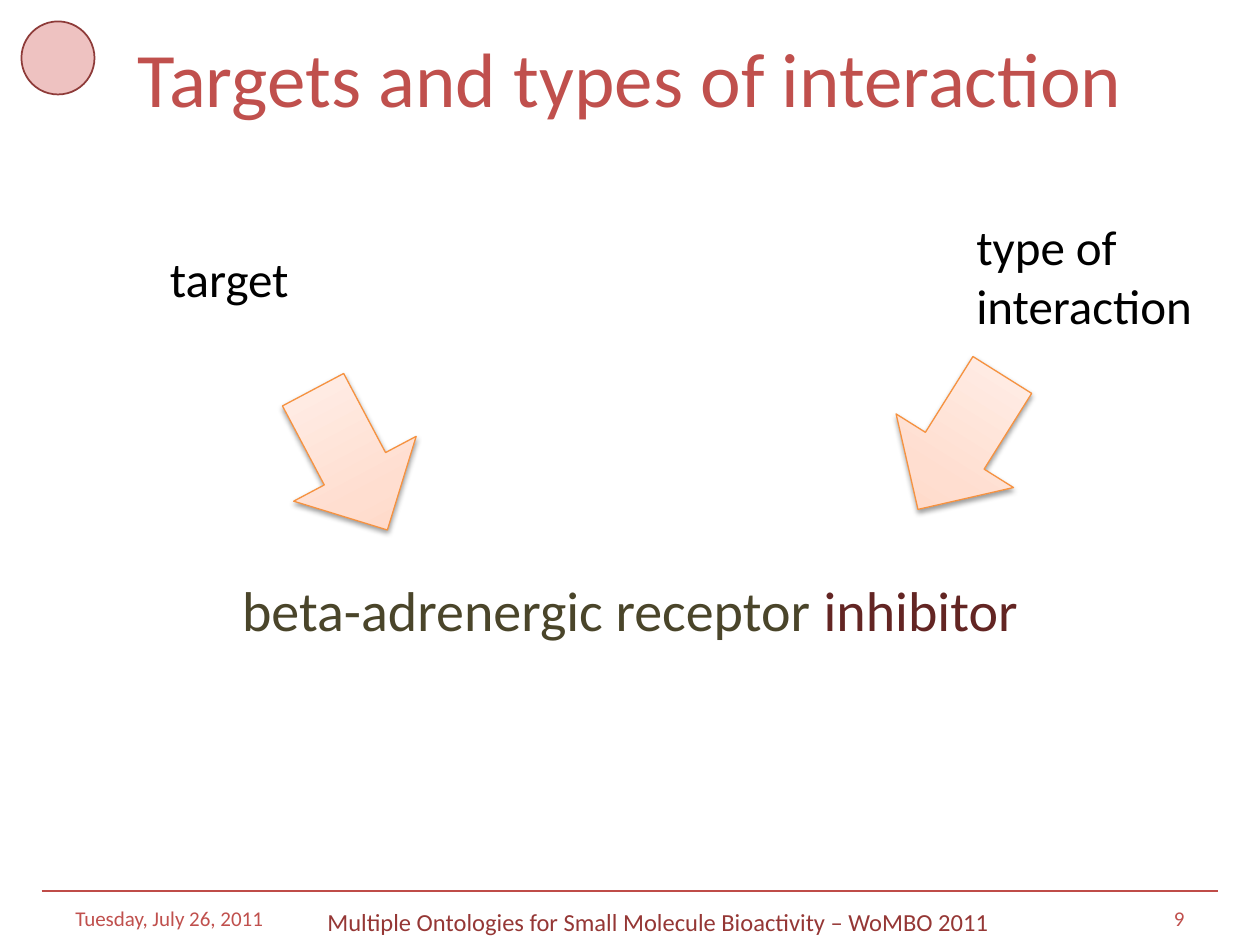
from copy import deepcopy

from lxml import etree
from pptx import Presentation
from pptx.dml.color import RGBColor
from pptx.enum.shapes import MSO_CONNECTOR, MSO_SHAPE
from pptx.enum.text import MSO_ANCHOR, MSO_AUTO_SIZE, PP_ALIGN
from pptx.oxml import parse_xml
from pptx.oxml.ns import nsdecls, qn
from pptx.util import Inches, Pt

FONT = "Calibri"
BLACK = RGBColor(0x00, 0x00, 0x00)
RED = RGBColor(0xC0, 0x50, 0x4D)
RULE_RED = RGBColor(0xBF, 0x4C, 0x48)
FOOTER_RED = RGBColor(0x95, 0x37, 0x35)
DARK_RED = RGBColor(0x63, 0x25, 0x23)
OLIVE = RGBColor(0x4A, 0x45, 0x2A)
EMBLEM_LINE = RGBColor(0x8E, 0x3B, 0x39)
EMBLEM_FILL = RGBColor(0xEE, 0xC2, 0xC1)
ORANGE = RGBColor(0xF6, 0x92, 0x40)
PEACH_STOPS = (
    (0, RGBColor(0xFF, 0xD2, 0xBD)),
    (0.35, RGBColor(0xFF, 0xDE, 0xD0)),
    (1, RGBColor(0xFF, 0xF2, 0xED)),
)


def add_span(para, text, size, color):
    """Append one formatted run to a paragraph."""
    span = para.add_run()
    span.text = text
    span.font.name = FONT
    span.font.size = Pt(size)
    span.font.color.rgb = color


def place(shape, box):
    """Move a shape to a box given in inches."""
    shape.left, shape.top, shape.width, shape.height = map(Inches, box)


def add_label(page, box, lines, size, color, align=PP_ALIGN.LEFT,
              anchor=MSO_ANCHOR.TOP, wrap=True):
    """Add a text box whose lines share one paragraph."""
    label = page.shapes.add_textbox(*map(Inches, box))
    frame = label.text_frame
    frame.word_wrap = wrap
    frame.vertical_anchor = anchor
    frame.auto_size = MSO_AUTO_SIZE.NONE if wrap else MSO_AUTO_SIZE.SHAPE_TO_FIT_TEXT
    para = frame.paragraphs[0]
    para.alignment = align
    for number, line in enumerate(lines):
        if number:
            para.add_line_break()
        add_span(para, line, size, color)


def add_emblem(page, box):
    """Add the plain corner ellipse."""
    emblem = page.shapes.add_shape(MSO_SHAPE.OVAL, *map(Inches, box))
    emblem.shadow.inherit = False
    emblem.fill.solid()
    emblem.fill.fore_color.rgb = EMBLEM_FILL
    emblem.line.color.rgb = EMBLEM_LINE
    emblem.line.width = Pt(1)


def fill_title(page, box):
    """Place and fill the title."""
    title = page.shapes.title
    place(title, box)
    title.text_frame.vertical_anchor = MSO_ANCHOR.MIDDLE
    para = title.text_frame.paragraphs[0]
    para.alignment = PP_ALIGN.CENTER
    add_span(para, "Targets and types of interaction", 44, RED)


def fill_phrase(page, box):
    """Place the body and fill it with the two-coloured phrase."""
    body = page.placeholders[1]
    place(body, box)
    body.text_frame.margin_top = Inches(1.32)
    para = body.text_frame.paragraphs[0]
    properties = para._p.get_or_add_pPr()
    properties.set("marL", "0")
    properties.set("indent", "0")
    etree.SubElement(properties, qn("a:buNone"))
    para.alignment = PP_ALIGN.CENTER
    para.space_before = Pt(0)
    add_span(para, "beta-adrenergic receptor ", 32, OLIVE)
    add_span(para, "inhibitor", 32, DARK_RED)


def add_arrow(page, box, rotation):
    """Add a turned block arrow with a peach gradient and soft shadow."""
    arrow = page.shapes.add_shape(MSO_SHAPE.DOWN_ARROW, *map(Inches, box))
    arrow.rotation = rotation
    arrow.fill.gradient()
    arrow.fill.gradient_angle = 90
    stops = arrow._element.spPr.find(qn("a:gradFill")).find(qn("a:gsLst"))
    stops.insert(1, deepcopy(stops[0]))
    for stop, (position, color) in zip(arrow.fill.gradient_stops, PEACH_STOPS):
        stop.position = position
        stop.color.rgb = color
    arrow.line.color.rgb = ORANGE
    arrow.line.width = Pt(0.75)
    arrow.shadow.inherit = False
    effects = arrow._element.spPr.find(qn("a:effectLst"))
    effects.append(parse_xml(
        f'<a:outerShdw {nsdecls("a")} blurRad="{Pt(3.1)}" dist="{Pt(1.6)}" '
        'dir="5400000" rotWithShape="0"><a:srgbClr val="000000">'
        '<a:alpha val="38000"/></a:srgbClr></a:outerShdw>'))


def add_footer(page, left, top, width):
    """Add the rule, date, event name and page number."""
    right = left + width
    rule = page.shapes.add_connector(
        MSO_CONNECTOR.STRAIGHT, Inches(left), Inches(top), Inches(right), Inches(top))
    rule.line.color.rgb = RULE_RED
    rule.line.width = Pt(1)
    etree.SubElement(rule._element.spPr, qn("a:effectLst"))
    text_top = top + 0.08
    add_label(page, (left + 0.17, text_top, 2.33, 0.27), ["Tuesday, July 26, 2011"],
              12, RED, anchor=MSO_ANCHOR.MIDDLE)
    add_label(page, (right - 2.5, text_top, 2.33, 0.27), ["9"],
              12, RED, PP_ALIGN.RIGHT, MSO_ANCHOR.MIDDLE)
    add_label(page, (left + 2.17, text_top, 5.56, 0.35),
              ["Multiple Ontologies for Small Molecule Bioactivity – WoMBO 2011"],
              14, FOOTER_RED)


def main():
    """Build and save the deck."""
    deck = Presentation()
    deck.slide_width, deck.slide_height = Inches(10), Inches(7.5)
    page = deck.slides.add_slide(deck.slide_layouts[1])
    add_emblem(page, (0.17, 0.17, 0.58, 0.58))
    fill_title(page, (0.5, 0.17, 9, 0.87))
    fill_phrase(page, (0.5, 3.25, 9, 3.75))
    add_footer(page, 0.33, 7.07, 9.34)
    add_label(page, (1.25, 1.92, 1.15, 0.57), ["target"], 28, BLACK, wrap=False)
    add_arrow(page, (2.23, 3.02, 1.1, 1.26), 332.1)
    add_label(page, (7.65, 1.67, 1.93, 1.04), ["type of", "interaction"],
              28, BLACK, wrap=False)
    add_arrow(page, (7.07, 2.88, 1.1, 1.26), 32.1)
    deck.save("out.pptx")


if __name__ == "__main__":
    main()
